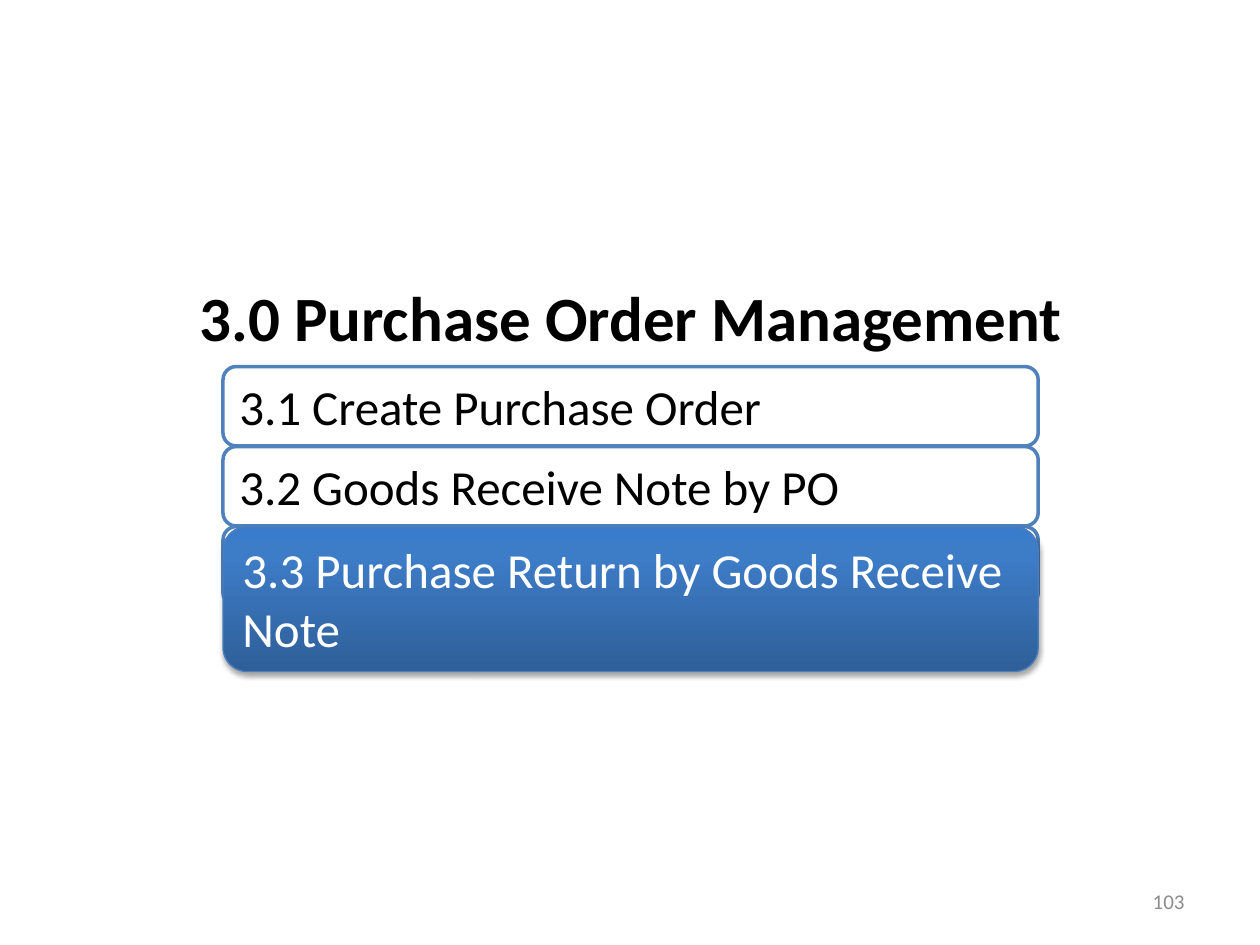
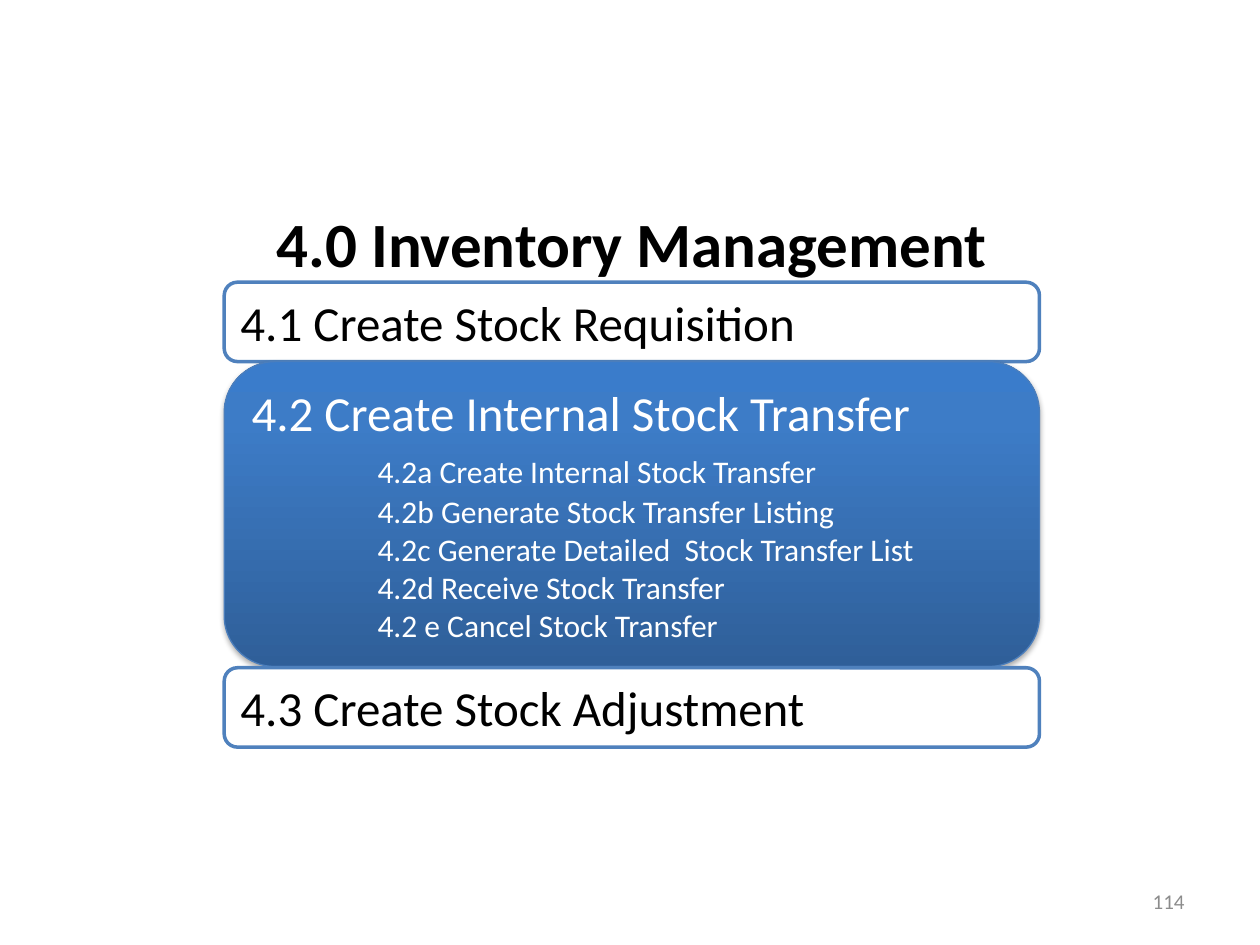
import copy

import pptx
import pptx.util
import pptx.dml.color
import pptx.enum.shapes
import pptx.enum.text
import pptx.oxml
import pptx.oxml.ns

WIDTH, HEIGHT = 10, 7.5
FONT = "Calibri"
BLACK, WHITE, GREY = "000000", "FFFFFF", "8C8C8C"
OUTLINE, ACTIVE_OUTLINE = "4F81BD", "4B7EBC"
GRADIENT = [(0, "2F5F99"), (0.8, "3D7CC7"), (1, "3A7CCB")]
MENU_WIDTH, ROW = 6.47, 0.63
TITLE_HEIGHT = 0.71
SHADOW = (
    '<a:outerShdw %s blurRad="%d" dist="%d" dir="5400000" rotWithShape="0">'
    '<a:srgbClr val="000000"><a:alpha val="35000"/></a:srgbClr></a:outerShdw>'
)


def colour(code):
    """Turn a hex string into a colour."""
    return pptx.dml.color.RGBColor.from_string(code)


def inches(*lengths):
    """Turn numbers into lengths in inches."""
    return [pptx.util.Inches(length) for length in lengths]


def style(para, size, code, bold=False):
    """Format every run of a paragraph."""
    for span in para.runs:
        span.font.name = FONT
        span.font.size = pptx.util.Pt(size)
        span.font.bold = bold
        span.font.color.rgb = colour(code)


def add_label(page, area, text, size, code, align, bold=False):
    """Add a one-line text box and return its frame."""
    frame = page.shapes.add_textbox(*inches(*area)).text_frame
    frame.text = text
    frame.paragraphs[0].alignment = align
    style(frame.paragraphs[0], size, code, bold)
    return frame


def add_title(page, centre, top, width, text):
    """Add the bold section title centred above its menu."""
    area = (centre - width / 2, top, width, TITLE_HEIGHT)
    frame = add_label(page, area, text, 36, BLACK, pptx.enum.text.PP_ALIGN.CENTER, True)
    frame.word_wrap = False
    frame.auto_size = pptx.enum.text.MSO_AUTO_SIZE.SHAPE_TO_FIT_TEXT


def add_number(page, number):
    """Add the page number at the lower right."""
    area = (WIDTH * 0.717, HEIGHT * 0.927, WIDTH * 0.233, 0.4)
    frame = add_label(page, area, number, 12, GREY, pptx.enum.text.PP_ALIGN.RIGHT)
    frame.word_wrap = True
    frame.vertical_anchor = pptx.enum.text.MSO_ANCHOR.MIDDLE


def add_box(page, left, top, height):
    """Add a white outlined rounded box."""
    kind = pptx.enum.shapes.MSO_SHAPE.ROUNDED_RECTANGLE
    box = page.shapes.add_shape(kind, *inches(left, top, MENU_WIDTH, height))
    box.shadow.inherit = False
    box.fill.solid()
    box.fill.fore_color.rgb = colour(WHITE)
    box.line.color.rgb = colour(OUTLINE)
    box.line.width = pptx.util.Pt(2)
    return box


def highlight(box):
    """Give a box the blue gradient and the soft shadow."""
    box.fill.gradient()
    box.fill.gradient_angle = 90
    stop_list = box._element.spPr.find(".//" + pptx.oxml.ns.qn("a:gsLst"))
    stop_list.append(copy.deepcopy(stop_list[0]))
    for stop, (position, code) in zip(box.fill.gradient_stops, GRADIENT):
        stop.position = position
        stop.color.rgb = colour(code)
    box.line.color.rgb = colour(ACTIVE_OUTLINE)
    box.line.width = pptx.util.Pt(0.75)
    effects = box._element.spPr.find(pptx.oxml.ns.qn("a:effectLst"))
    blur, distance = pptx.util.Pt(3.1), pptx.util.Pt(1.8)
    effects.append(pptx.oxml.parse_xml(SHADOW % (pptx.oxml.ns.nsdecls("a"), blur, distance)))


def write_item(box, heading, code, steps=()):
    """Write a menu heading and its indented steps."""
    frame = box.text_frame
    frame.word_wrap = True
    frame.vertical_anchor = pptx.enum.text.MSO_ANCHOR.TOP
    frame.auto_size = pptx.enum.text.MSO_AUTO_SIZE.SHAPE_TO_FIT_TEXT
    frame.text = "\n".join([heading, *steps])
    for index, para in enumerate(frame.paragraphs):
        para.alignment = pptx.enum.text.PP_ALIGN.LEFT
        style(para, 18 if index else 28, code)
        if index:
            para._p.get_or_add_pPr().set("marL", str(pptx.util.Inches(1)))
        if index == 1:
            para.space_before = pptx.util.Pt(6.2)
            para.space_after = pptx.util.Pt(1.2)


def add_item(page, left, top, heading, height=ROW, active=False, steps=()):
    """Add one menu item, highlighted when active."""
    box = add_box(page, left, top, height)
    if active:
        highlight(box)
    write_item(box, heading, WHITE if active else BLACK, steps)


def add_page(deck, number, title, title_top, title_width, left):
    """Add a section page with its title and number."""
    page = deck.slides.add_slide(deck.slide_layouts[6])
    add_number(page, number)
    add_title(page, left + MENU_WIDTH / 2, title_top, title_width, title)
    return page


def add_purchase_page(deck):
    """Build the purchase order menu."""
    left, top = 1.77, 2.91
    page = add_page(deck, "103", "3.0 Purchase Order Management", 2.16, 7.12, left)
    rows = [top + index * (ROW + 0.005) for index in range(3)]
    add_item(page, left, rows[0], "3.1 Create Purchase Order")
    add_item(page, left, rows[1], "3.2 Goods Receive Note by PO")
    add_box(page, left, rows[2], ROW)
    add_item(page, left, rows[2], "3.3 Purchase Return by Goods Receive Note", 1.15, True)


def add_inventory_page(deck):
    """Build the inventory menu with the transfer steps."""
    left, top, transfer_height = 1.78, 2.24, 2.42
    page = add_page(deck, "114", "4.0 Inventory Management", 1.57, 5.9, left)
    steps = [
        "4.2a Create Internal Stock Transfer",
        "4.2b Generate Stock Transfer Listing",
        "4.2c Generate Detailed  Stock Transfer List",
        "4.2d Receive Stock Transfer",
        "4.2 e Cancel Stock Transfer",
    ]
    add_item(page, left, top, "4.1 Create Stock Requisition")
    add_item(page, left, top + ROW, "4.2 Create Internal Stock Transfer",
             transfer_height, True, steps)
    add_item(page, left, top + ROW + transfer_height + 0.01, "4.3 Create Stock Adjustment")


def main():
    """Build and save the deck."""
    deck = pptx.Presentation()
    deck.slide_width, deck.slide_height = inches(WIDTH, HEIGHT)
    add_purchase_page(deck)
    add_inventory_page(deck)
    deck.save("out.pptx")


if __name__ == "__main__":
    main()
